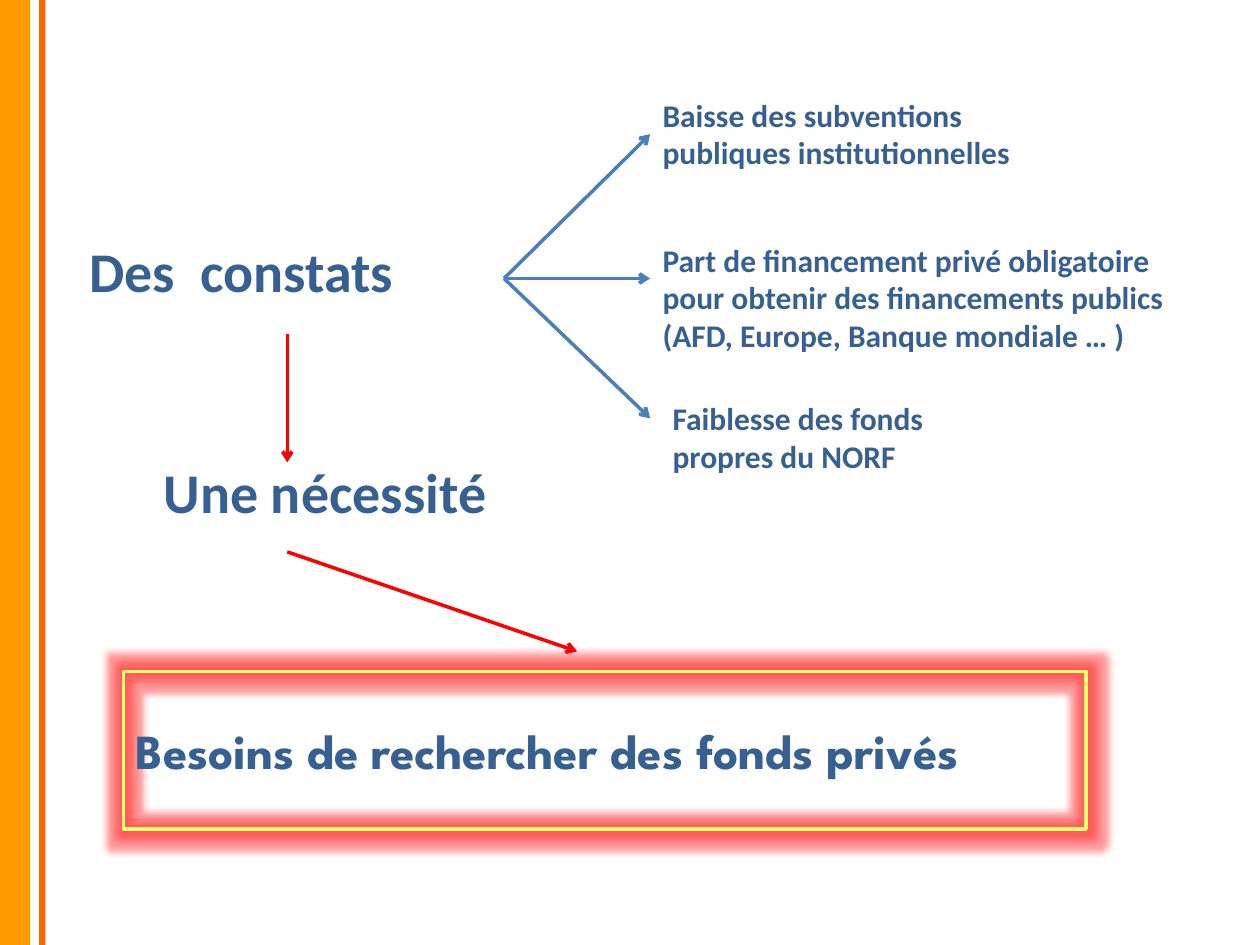
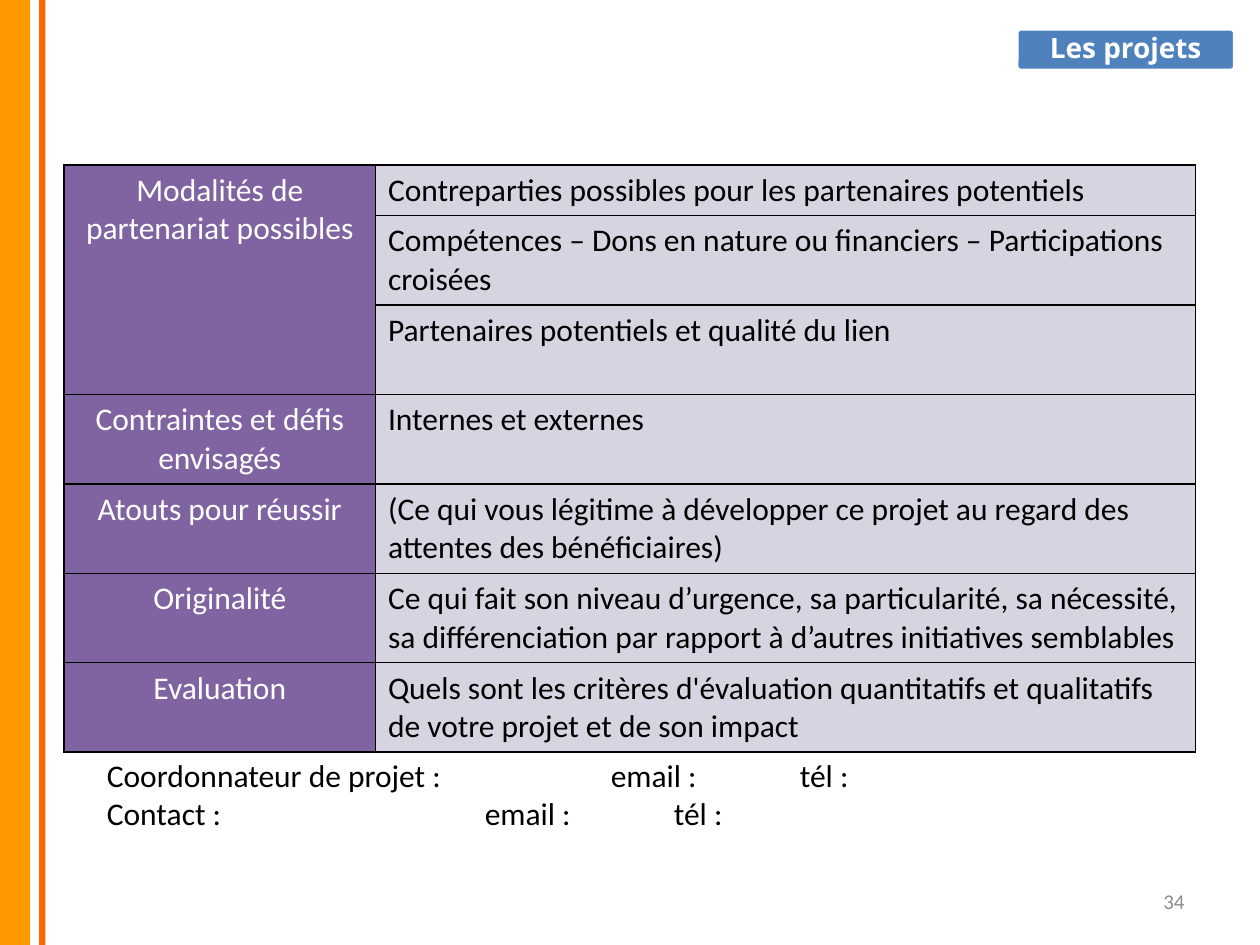
from lxml import etree
from pptx import Presentation
from pptx.dml.color import RGBColor
from pptx.enum.shapes import MSO_CONNECTOR, MSO_SHAPE
from pptx.enum.text import MSO_ANCHOR, PP_ALIGN
from pptx.oxml.ns import qn
from pptx.util import Inches, Pt

RECTANGLE, ROUNDED = MSO_SHAPE.RECTANGLE, MSO_SHAPE.ROUNDED_RECTANGLE
STRAIGHT = MSO_CONNECTOR.STRAIGHT
LEFT, CENTER, RIGHT = PP_ALIGN.LEFT, PP_ALIGN.CENTER, PP_ALIGN.RIGHT
TOP, MIDDLE = MSO_ANCHOR.TOP, MSO_ANCHOR.MIDDLE
LEFT_SIDE, RIGHT_SIDE = 1, 3

ORANGE = RGBColor(0xFF, 0x99, 0x00)
DARK_ORANGE = RGBColor(0xFF, 0x66, 0x00)
NAVY = RGBColor(0x37, 0x60, 0x92)
BLUE = RGBColor(0x4F, 0x81, 0xBD)
ARROW_BLUE = RGBColor(0x4B, 0x7E, 0xBC)
RED = RGBColor(0xFF, 0x00, 0x00)
YELLOW = RGBColor(0xFF, 0xFF, 0x66)
PURPLE = RGBColor(0x80, 0x64, 0xA2)
LILAC = RGBColor(0xD8, 0xD3, 0xE0)
GREY = RGBColor(0x8C, 0x8C, 0x8C)
BLACK = RGBColor(0x00, 0x00, 0x00)
WHITE = RGBColor(0xFF, 0xFF, 0xFF)

# Content: lengths in inches
WIDTH, HEIGHT = 10, 7.5
BANDS = [(0, 0.24, ORANGE), (0.31, 0.05, DARK_ORANGE)]

CONCLUSION = "Besoins de rechercher des fonds privés"
FINDINGS = [
    ("Baisse des subventions publiques institutionnelles", (5.16, 0.71, 3.39, 0.71)),
    ("Part de financement privé obligatoire pour obtenir des financements publics "
     "(AFD, Europe, Banque mondiale … )", (5.16, 1.86, 4.41, 1.01)),
    ("Faiblesse des fonds propres du NORF", (5.24, 3.12, 2.44, 0.71)),
]
FAN_START, FAN_X, FAN_ENDS = (4, 2.21), 5.16, (1.06, 2.21, 3.32)
STEP_ARROWS = [((2.28, 2.65), (2.28, 3.67)), ((2.28, 4.38), (4.58, 5.17))]

PROJECT_ROWS = [
    ("Modalités de partenariat possibles", [
        "Contreparties possibles pour les partenaires potentiels",
        "Compétences – Dons en nature ou financiers – Participations croisées",
        "Partenaires potentiels et qualité du lien"]),
    ("Contraintes et défis envisagés", ["Internes et externes"]),
    ("Atouts pour réussir", [
        "(Ce qui vous légitime à développer ce projet au regard des attentes "
        "des bénéficiaires)"]),
    ("Originalité", [
        "Ce qui fait son niveau d’urgence, sa particularité, sa nécessité, "
        "sa différenciation par rapport à d’autres initiatives semblables"]),
    ("Evaluation", [
        "Quels sont les critères d'évaluation quantitatifs et qualitatifs "
        "de votre projet et de son impact"]),
]
COLUMN_WIDTHS = (2.47, 6.51)
ONE_LINE, TWO_LINES = 0.4, 0.71
CONTACTS = [("Coordonnateur de projet :\temail :\ttél :", (4, 5.5)),
            ("Contact :\temail :\ttél :", (3, 4.5))]


def inches(values):
    return [Inches(value) for value in values]


def write(frame, text, size=18, color=BLACK, font="Calibri", bold=False,
          align=LEFT, anchor=TOP):
    """Fill a text frame, one paragraph for each line of text."""
    frame.word_wrap = True
    frame.vertical_anchor = anchor
    for index, line in enumerate(text.split("\n")):
        para = frame.add_paragraph() if index else frame.paragraphs[0]
        para.alignment = align
        span = para.add_run()
        span.text = line
        span.font.name, span.font.size, span.font.bold = font, Pt(size), bold
        span.font.color.rgb = color


def add_text(page, area, text, **style):
    box = page.shapes.add_textbox(*inches(area))
    write(box.text_frame, text, **style)
    return box


def add_block(page, area, kind=RECTANGLE, fill=None, line=None):
    block = page.shapes.add_shape(kind, *inches(area))
    block.shadow.inherit = False
    if fill is None:
        block.fill.background()
    else:
        block.fill.solid()
        block.fill.fore_color.rgb = fill
    if line is None:
        block.line.fill.background()
    else:
        block.line.color.rgb, block.line.width = line, Pt(2)
    return block


def add_arrow(page, start, end, color):
    arrow = page.shapes.add_connector(STRAIGHT, *inches(start + end))
    arrow.line.color.rgb, arrow.line.width = color, Pt(2)
    etree.SubElement(arrow.line._get_or_add_ln(), qn("a:tailEnd"), type="arrow")
    etree.SubElement(arrow._element.spPr, qn("a:effectLst"))
    return arrow


def add_glow(block, color, radius, opacity):
    effects = block._element.spPr.find(qn("a:effectLst"))
    glow = etree.SubElement(effects, qn("a:glow"), rad=str(Pt(radius)))
    tint = etree.SubElement(glow, qn("a:srgbClr"), val=str(color))
    etree.SubElement(tint, qn("a:alpha"), val=str(opacity * 1000))


def set_tabs(para, stops):
    tabs = etree.SubElement(para._p.get_or_add_pPr(), qn("a:tabLst"))
    for stop in stops:
        etree.SubElement(tabs, qn("a:tab"), pos=str(Inches(stop)), algn="l")


def fill_cell(cell, text, fill, **style):
    write(cell.text_frame, text, **style)
    cell.fill.solid()
    cell.fill.fore_color.rgb = fill


def add_borders(cell):
    properties = cell._tc.get_or_add_tcPr()
    for index, side in enumerate(("lnL", "lnR", "lnT", "lnB")):
        border = etree.Element(qn("a:" + side), w=str(Pt(1)))
        paint = etree.SubElement(border, qn("a:solidFill"))
        etree.SubElement(paint, qn("a:srgbClr"), val=str(BLACK))
        properties.insert(index, border)


def add_page(deck):
    page = deck.slides.add_slide(deck.slide_layouts[6])
    for left, width, color in BANDS:
        add_block(page, (left, 0, width, HEIGHT), fill=color)
    return page


def build_findings(deck):
    page = add_page(deck)

    # Conclusion in a glowing frame
    frame = add_block(page, (0.98, 5.33, 7.64, 1.25), line=YELLOW)
    add_glow(frame, RED, radius=8, opacity=40)
    write(frame.text_frame, CONCLUSION, size=28, color=NAVY, bold=True,
          font="League Spartan", anchor=MIDDLE)

    # Headings and findings
    heading = dict(size=32, color=NAVY, bold=True)
    source = add_text(page, (0.61, 1.83, 3.39, 0.76), "Des  constats", **heading)
    add_text(page, (0.34, 3.58, 3.62, 0.64), "Une nécessité", align=RIGHT, **heading)
    boxes = [add_text(page, area, text, color=NAVY, bold=True)
             for text, area in FINDINGS]

    # Arrows
    fan = [add_arrow(page, FAN_START, (FAN_X, y), ARROW_BLUE) for y in FAN_ENDS]
    for arrow in fan:
        arrow.begin_connect(source, RIGHT_SIDE)
    fan[0].end_connect(boxes[0], LEFT_SIDE)
    for start, end in STEP_ARROWS:
        add_arrow(page, start, end, RED)


def build_project(deck):
    page = add_page(deck)
    add_text(page, (7.17, 6.95, 2.33, 0.4), "34", size=12, color=GREY,
             align=RIGHT, anchor=MIDDLE)

    # Project table: each label spans its own details
    count = sum(len(details) for _, details in PROJECT_ROWS)
    heights = [ONE_LINE] + [TWO_LINES] * (count - 1)
    area = (0.51, 1.31, sum(COLUMN_WIDTHS), sum(heights))
    table = page.shapes.add_table(count, 2, *inches(area)).table
    for column, width in zip(table.columns, COLUMN_WIDTHS):
        column.width = Inches(width)
    for row, height in zip(table.rows, heights):
        row.height = Inches(height)
    top = 0
    for label, details in PROJECT_ROWS:
        cell = table.cell(top, 0)
        if len(details) > 1:
            cell.merge(table.cell(top + len(details) - 1, 0))
        fill_cell(cell, label, PURPLE, color=WHITE, align=CENTER)
        for offset, detail in enumerate(details):
            fill_cell(table.cell(top + offset, 1), detail, LILAC)
        top += len(details)
    for cell in table.iter_cells():
        add_borders(cell)

    # Section tag
    tag = add_block(page, (8.07, 0.23, 1.73, 0.33), ROUNDED, fill=BLUE, line=WHITE)
    tag.adjustments[0] = 0.1
    tag.text_frame.margin_top = 0
    tag.text_frame.margin_bottom = Inches(0.03)
    write(tag.text_frame, "Les projets", size=16, color=WHITE, bold=True,
          font="Open Sans", align=CENTER, anchor=MIDDLE)

    # Contact lines
    box = add_text(page, (0.75, 5.95, 8.5, 0.71),
                   "\n".join(text for text, _ in CONTACTS))
    for para, (_, stops) in zip(box.text_frame.paragraphs, CONTACTS):
        set_tabs(para, stops)


def main():
    deck = Presentation()
    deck.slide_width, deck.slide_height = inches((WIDTH, HEIGHT))
    build_findings(deck)
    build_project(deck)
    deck.save("out.pptx")


if __name__ == "__main__":
    main()
